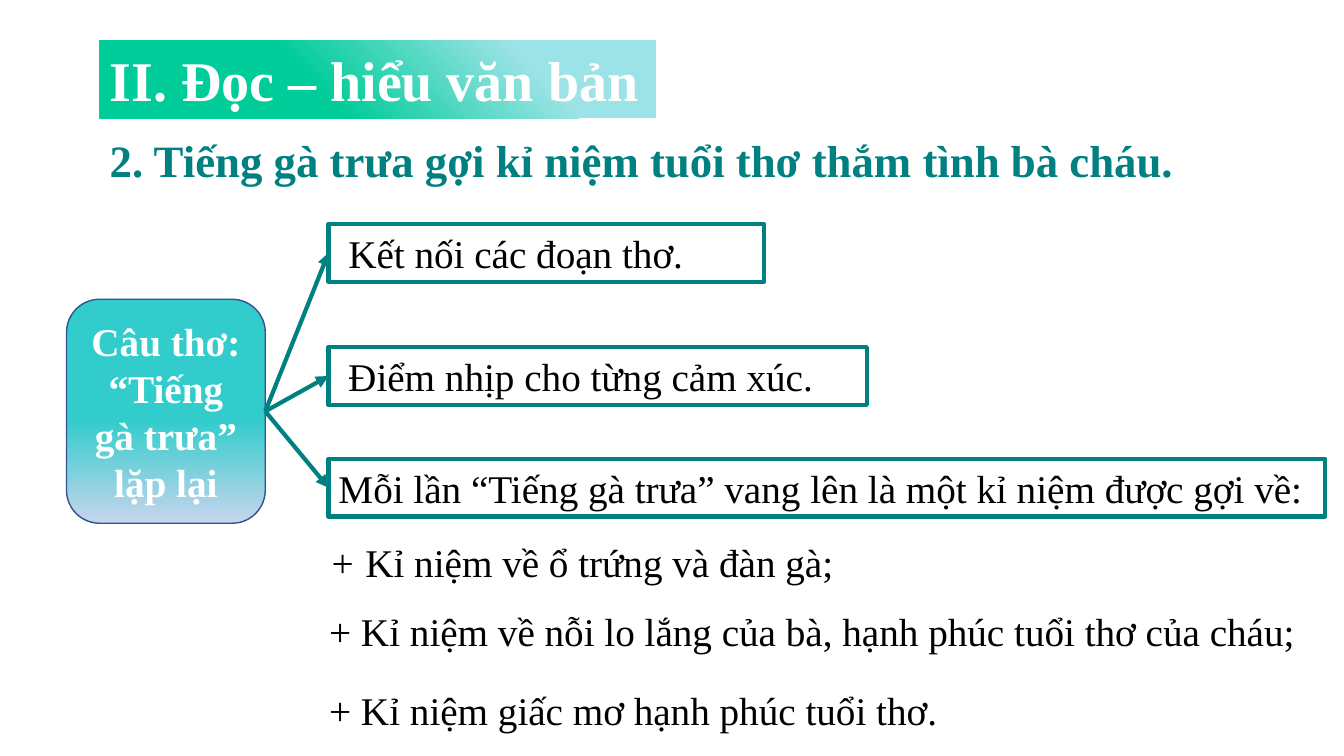
from pptx import Presentation
from pptx.dml.color import RGBColor
from pptx.enum import shapes, text
from pptx.oxml import parse_xml
from pptx.oxml.ns import nsdecls
from pptx.util import Pt

TEAL = RGBColor(0x00, 0x80, 0x80)
GREEN = RGBColor(0x00, 0xCC, 0x99)
AQUA = RGBColor(0x9B, 0xE3, 0xE6)
TURQUOISE = RGBColor(0x33, 0xCC, 0xCC)
PALE_BLUE = RGBColor(0xC7, 0xD5, 0xED)
NAVY = RGBColor(0x32, 0x54, 0x91)
WHITE = RGBColor(0xFF, 0xFF, 0xFF)
BLACK = RGBColor(0x00, 0x00, 0x00)
ALIGN = text.PP_ALIGN
ANCHOR = text.MSO_ANCHOR


class Deck:
    """Holds the style and the current slide; lengths are in points."""

    font = "Times New Roman"
    line_width = 3

    def __init__(self, width, height):
        self.prs = Presentation()
        self.prs.slide_width, self.prs.slide_height = Pt(width), Pt(height)
        self.s = self.prs.slides.add_slide(self.prs.slide_layouts[1])

    def place(self, sp, box):
        sp.left, sp.top, sp.width, sp.height = (Pt(v) for v in box)

    def frame(self, sp, anchor=ANCHOR.TOP):
        tf = sp.text_frame
        tf.word_wrap = True
        tf.auto_size = text.MSO_AUTO_SIZE.NONE
        tf.vertical_anchor = anchor
        return tf

    def run(self, p, words, size=28, color=BLACK, bold=False, italic=False):
        r = p.add_run()
        r.text = words
        f = r.font
        f.name, f.size, f.bold, f.italic = self.font, Pt(size), bold, italic
        f.color.rgb = color

    def gradient(self, sp, angle, *stops):
        sp.fill.gradient()
        sp.fill.gradient_angle = angle
        for stop, (position, color) in zip(sp.fill.gradient_stops, stops):
            stop.position, stop.color.rgb = position, color

    def title(self, words, box):
        sp = self.s.shapes.title
        self.place(sp, box)
        self.gradient(sp, 225, (0.24, AQUA), (0.61, GREEN))
        p = self.frame(sp).paragraphs[0]
        p.alignment = ALIGN.LEFT
        self.run(p, words, 40, WHITE, bold=True)

    def heading(self, words, box):
        sp = self.s.shapes.add_textbox(*(Pt(v) for v in box))
        p = self.frame(sp).paragraphs[0]
        p.line_spacing = 1.15
        self.run(p, words, 32, TEAL, bold=True)

    def shape(self, kind, box, line, width):
        sp = self.s.shapes.add_shape(kind, *(Pt(v) for v in box))
        sp.shadow.inherit = False
        sp.line.color.rgb, sp.line.width = line, Pt(width)
        return sp

    def topic(self, words, box):
        sp = self.shape(shapes.MSO_SHAPE.ROUNDED_RECTANGLE, box, NAVY, 1)
        self.gradient(sp, 270, (0.54, TURQUOISE), (1, PALE_BLUE))
        p = self.frame(sp, ANCHOR.MIDDLE).paragraphs[0]
        p.alignment = ALIGN.CENTER
        self.run(p, words, color=WHITE, bold=True)
        return sp

    def point(self, words, box):
        sp = self.shape(shapes.MSO_SHAPE.RECTANGLE, box, TEAL, self.line_width)
        sp.fill.background()
        p = self.frame(sp).paragraphs[0]
        p.alignment = ALIGN.JUSTIFY
        self.run(p, words)
        return sp

    def arrow(self, start, end):
        c = self.s.shapes.add_connector(shapes.MSO_CONNECTOR.STRAIGHT, 0, 0, 0, 0)
        c.begin_connect(start, 3)
        c.end_connect(end, 1)
        c.line.color.rgb, c.line.width = TEAL, Pt(self.line_width)
        c.line._get_or_add_ln().append(
            parse_xml(f'<a:tailEnd {nsdecls("a")} type="triangle"/>'))
        c._element.spPr.append(parse_xml(f'<a:effectLst {nsdecls("a")}/>'))

    def plus_list(self, items, box):
        sp = self.s.placeholders[1]
        self.place(sp, box)
        tf = self.frame(sp)
        for i, (words, gap, italic_plus) in enumerate(items):
            p = tf.paragraphs[0] if i == 0 else tf.add_paragraph()
            p.alignment, p.space_before = ALIGN.JUSTIFY, Pt(gap)
            pPr = p._p.get_or_add_pPr()
            pPr.set("marL", "0")
            pPr.set("indent", "0")
            pPr.append(parse_xml(f'<a:buNone {nsdecls("a")}/>'))
            self.run(p, "+ ", italic=italic_plus)
            self.run(p, words)


def main():
    deck = Deck(960, 540)

    # Title and heading
    deck.title("II. Đọc – hiểu văn bản", (71.3, 28.8, 397.4, 55.7))
    deck.heading("2. Tiếng gà trưa gợi kỉ niệm tuổi thơ thắm tình bà cháu.",
                 (71.3, 85.7, 833.8, 48.2))

    # Repeated line of verse and its effects
    topic = deck.topic("Câu thơ: “Tiếng gà trưa” lặp lại",
                       (47.5, 213.8, 142, 160))
    effects = [
        (" Kết nối các đoạn thơ.", 160, 311),
        (" Điểm nhịp cho từng cảm xúc.", 248, 384.5),
        ("Mỗi lần “Tiếng gà trưa” vang lên là một kỉ niệm được gợi về:",
         327.8, 712),
    ]
    for words, top, width in effects:
        deck.arrow(topic, deck.point(words, (234.7, top, width, 41.2)))

    # Memories
    deck.plus_list([
        ("Kỉ niệm về ổ trứng và đàn gà;", 0, True),
        ("Kỉ niệm về nỗi lo lắng của bà, hạnh phúc tuổi thơ của cháu;", 15.5, False),
        ("Kỉ niệm giấc mơ hạnh phúc tuổi thơ.", 22.5, False),
    ], (227.9, 381, 706, 143))

    deck.prs.save("out.pptx")


if __name__ == "__main__":
    main()
